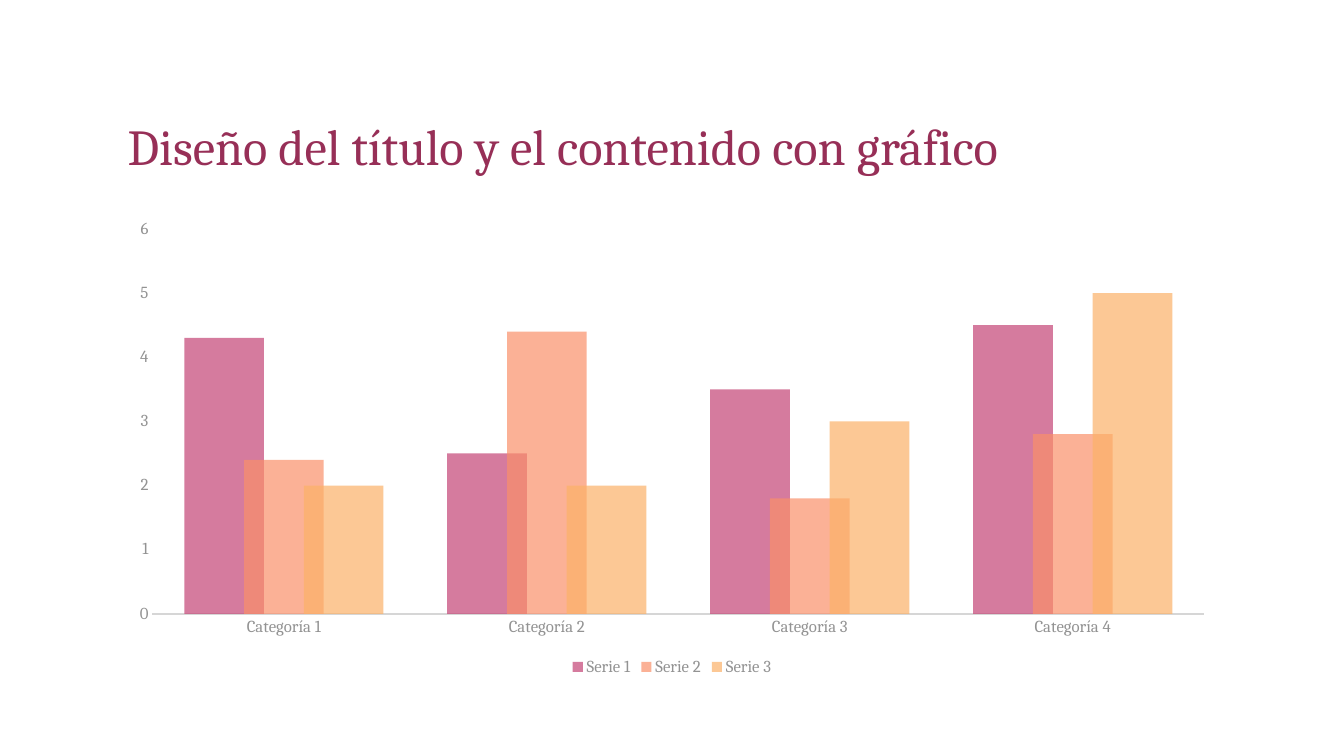
import pptx
import pptx.chart.data
import pptx.dml.color
import pptx.enum.chart
import pptx.enum.text
import pptx.oxml
import pptx.oxml.ns
import pptx.util
from lxml import etree

Pt = pptx.util.Pt
RGBColor = pptx.dml.color.RGBColor

FONT = "Cambria"
PLUM = RGBColor(0x97, 0x2F, 0x57)
GREY = RGBColor(0x93, 0x93, 0x93)
DARK_GREY = RGBColor(0x59, 0x59, 0x59)
LIGHT_GREY = RGBColor(0xD6, 0xD6, 0xD6)
PINK = RGBColor(0xC4, 0x44, 0x75)
CORAL = RGBColor(0xFA, 0x90, 0x6A)
APRICOT = RGBColor(0xFC, 0xB2, 0x68)

LEFT, WIDTH = Pt(84), Pt(792)
OPACITY = 70
CATEGORIES = ["Categoría 1", "Categoría 2", "Categoría 3", "Categoría 4"]
SERIES = [
    ("Serie 1", (4.3, 2.5, 3.5, 4.5), PINK),
    ("Serie 2", (2.4, 4.4, 1.8, 2.8), CORAL),
    ("Serie 3", (2, 2, 3, 5), APRICOT),
]


def set_font(font, size, color):
    font.name = FONT
    font.size = Pt(size)
    font.bold = False
    font.color.rgb = color


def set_title(slide, wording):
    title = slide.shapes.title
    title.left, title.top, title.width, title.height = LEFT, Pt(36), WIDTH, Pt(93.6)
    frame = title.text_frame
    frame.text = wording
    frame.word_wrap = True
    frame.auto_size = pptx.enum.text.MSO_AUTO_SIZE.NONE
    frame.vertical_anchor = pptx.enum.text.MSO_ANCHOR.BOTTOM
    paragraph = frame.paragraphs[0]
    paragraph.alignment = pptx.enum.text.PP_ALIGN.LEFT
    paragraph.line_spacing = 0.9
    set_font(paragraph.runs[0].font, 36, PLUM)


def fill_translucent(fill, color, opacity):
    fill.solid()
    fill.fore_color.rgb = color
    # The colour element has no public opacity setting.
    for rgb in fill._xPr.iter(pptx.oxml.ns.qn("a:srgbClr")):
        alpha = etree.SubElement(rgb, pptx.oxml.ns.qn("a:alpha"))
        alpha.set("val", str(opacity * 1000))


def style_axis(axis):
    axis.has_major_gridlines = False
    axis.major_tick_mark = pptx.enum.chart.XL_TICK_MARK.NONE
    axis.minor_tick_mark = pptx.enum.chart.XL_TICK_MARK.NONE
    set_font(axis.tick_labels.font, 12, GREY)


def add_column_chart(slide):
    chart_data = pptx.chart.data.CategoryChartData()
    chart_data.categories = CATEGORIES
    for name, values, _ in SERIES:
        chart_data.add_series(name, values)
    chart = slide.shapes.add_chart(
        pptx.enum.chart.XL_CHART_TYPE.COLUMN_CLUSTERED,
        LEFT, Pt(150), WIDTH, Pt(336), chart_data,
    ).chart
    chart.has_title = False
    set_font(chart.font, 10, DARK_GREY)

    style_axis(chart.category_axis)
    baseline = chart.category_axis.format.line
    baseline.color.rgb = LIGHT_GREY
    baseline.width = Pt(1.25)
    style_axis(chart.value_axis)
    chart.value_axis.format.line.fill.background()
    chart.value_axis.minimum_scale = 0
    chart.value_axis.maximum_scale = 6
    chart.value_axis.major_unit = 1

    chart.has_legend = True
    chart.legend.position = pptx.enum.chart.XL_LEGEND_POSITION.BOTTOM
    chart.legend.include_in_layout = False
    set_font(chart.legend.font, 12, GREY)

    columns = chart.plots[0]
    columns.gap_width = 80
    columns.overlap = 25
    columns.vary_by_categories = False
    for series, (_, _, color) in zip(columns.series, SERIES):
        series.invert_if_negative = False
        fill_translucent(series.format.fill, color, OPACITY)


def main():
    presentation = pptx.Presentation()
    presentation.slide_width = Pt(960)
    presentation.slide_height = Pt(540)
    slide = presentation.slides.add_slide(presentation.slide_layouts[5])
    set_title(slide, "Diseño del título y el contenido con gráfico")
    add_column_chart(slide)
    presentation.save("out.pptx")


if __name__ == "__main__":
    main()
